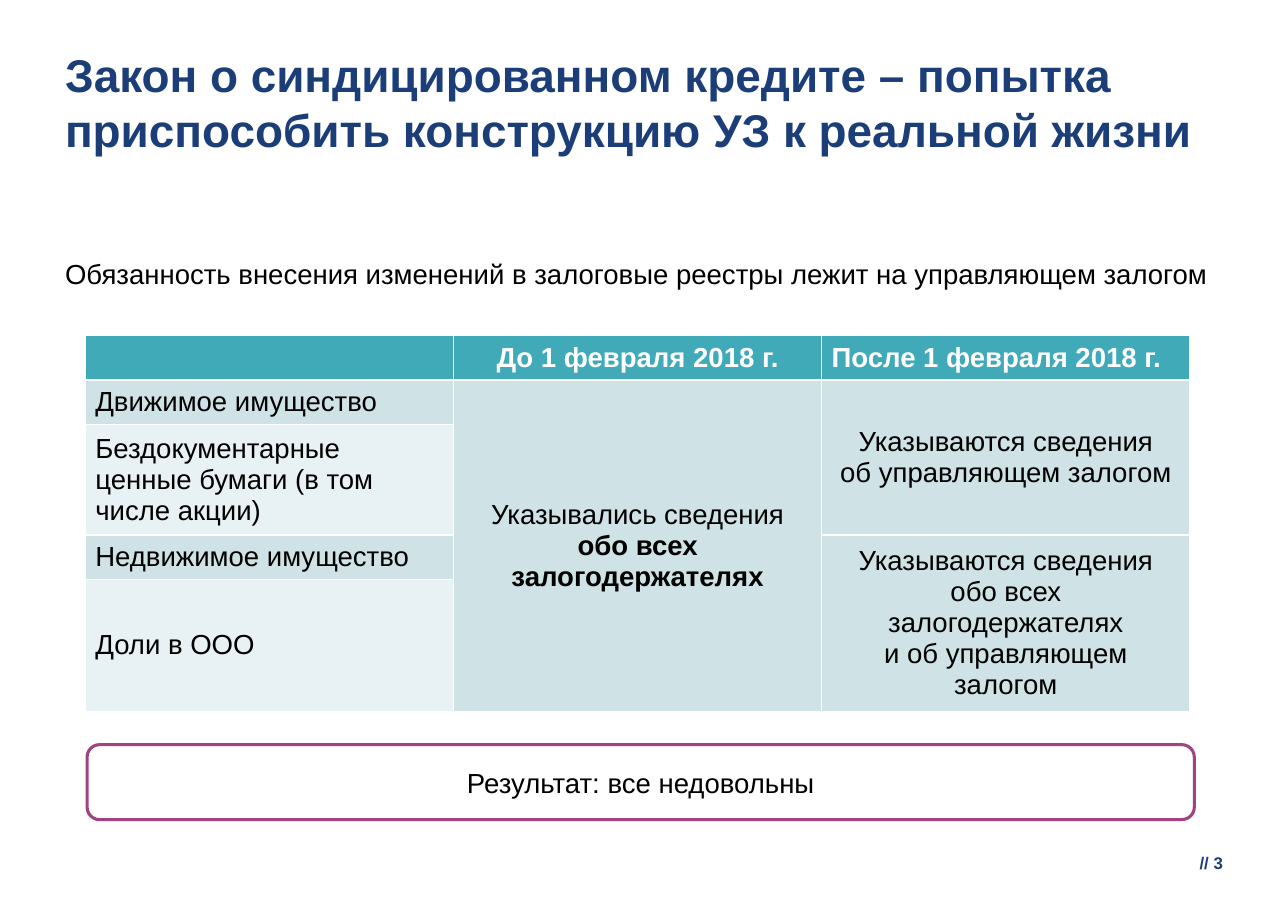
from pptx import Presentation
from pptx.dml.color import RGBColor
from pptx.enum import shapes, text
from pptx.util import Pt

HUE = {"navy": "1C3E78", "black": "000000", "white": "FFFFFF", "teal": "40AAB8",
       "mist": "CFE2E6", "pale": "E8F1F3", "plum": "A24381"}
LEFT, MID, RIGHT = text.PP_ALIGN.LEFT, text.PP_ALIGN.CENTER, text.PP_ALIGN.RIGHT


def rgb(name):
    return RGBColor.from_string(HUE[name])


def write(frame, words, size, hue, bold=False, align=LEFT):
    """Fill a text frame or cell frame, one paragraph a line, in one style."""
    frame.text = words
    frame.word_wrap = True
    frame.vertical_anchor = text.MSO_ANCHOR.MIDDLE
    for par in frame.paragraphs:
        par.alignment = align
        for run in par.runs:
            run.font.name = "Arial"
            run.font.size = Pt(size)
            run.font.bold = bold
            run.font.color.rgb = rgb(hue)


prs = Presentation()
prs.slide_width, prs.slide_height = Pt(841.68), Pt(595.44)
slide = prs.slides.add_slide(prs.slide_layouts[6])

# Title, lead line and page number
labels = [
    ((42.5, 23.8, 757, 85), "Закон о синдицированном кредите – попытка "
     "приспособить конструкцию УЗ к реальной жизни", 30, "navy", True, LEFT),
    ((42.5, 168, 757, 21), "Обязанность внесения изменений в залоговые реестры "
     "лежит на управляющем залогом", 18, "black", False, LEFT),
    ((768, 554.4, 31.2, 18.7), "// 3", 11, "navy", True, RIGHT),
]
for place, *style in labels:
    frame = slide.shapes.add_textbox(*map(Pt, place)).text_frame
    frame.margin_left = frame.margin_right = 0
    frame.margin_top = frame.margin_bottom = 0
    write(frame, *style)

# Table of registers before and after the law
heights = [29.2, 29.2, 67.2, 29.2, 78.4]
table = slide.shapes.add_table(5, 3, Pt(55.8), Pt(219.2), Pt(721.8), Pt(sum(heights))).table
for row, height in zip(table.rows, heights):
    row.height = Pt(height)
for col in table.columns:
    col.width = Pt(240.6)

for r in range(5):
    for c in range(3):
        fill = table.cell(r, c).fill
        fill.solid()
        fill.fore_color.rgb = rgb("teal" if r == 0 else "mist" if c or r % 2 else "pale")

for top, col, end in [(1, 1, 4), (1, 2, 2), (3, 2, 4)]:
    table.cell(top, col).merge(table.cell(end, col))

heads = ["", "До 1 февраля 2018 г.", "После 1 февраля 2018 г."]
assets = ["Движимое имущество", "Бездокументарные ценные бумаги (в том числе акции)",
          "Недвижимое имущество", "Доли в ООО"]
duties = {
    (1, 1): "Указывались сведения\nобо всех залогодержателях",
    (1, 2): "Указываются сведения\nоб управляющем залогом",
    (3, 2): "Указываются сведения\nобо всех залогодержателях\nи об управляющем залогом",
}
items = [((0, c), words, "white", True, MID if c == 1 else LEFT)
         for c, words in enumerate(heads) if words]
items += [((r, 0), words, "black", False, LEFT) for r, words in enumerate(assets, 1)]
items += [(spot, words, "black", False, MID) for spot, words in duties.items()]
for spot, words, hue, bold, align in items:
    cell = table.cell(*spot)
    write(cell.text_frame, words, 18, hue, bold, align)
    cell.vertical_anchor = text.MSO_ANCHOR.MIDDLE
    cell.margin_left = cell.margin_right = Pt(6.5)
    cell.margin_top = cell.margin_bottom = Pt(3.6)
table.cell(1, 1).text_frame.paragraphs[1].runs[0].font.bold = True

# Result box
box = slide.shapes.add_shape(shapes.MSO_SHAPE.ROUNDED_RECTANGLE,
                             Pt(56.9), Pt(486.7), Pt(723.6), Pt(49))
box.shadow.inherit = False
box.fill.solid()
box.fill.fore_color.rgb = rgb("white")
box.line.color.rgb = rgb("plum")
box.line.width = Pt(2)
write(box.text_frame, "Результат: все недовольны", 18, "black", align=MID)

prs.save("out.pptx")
